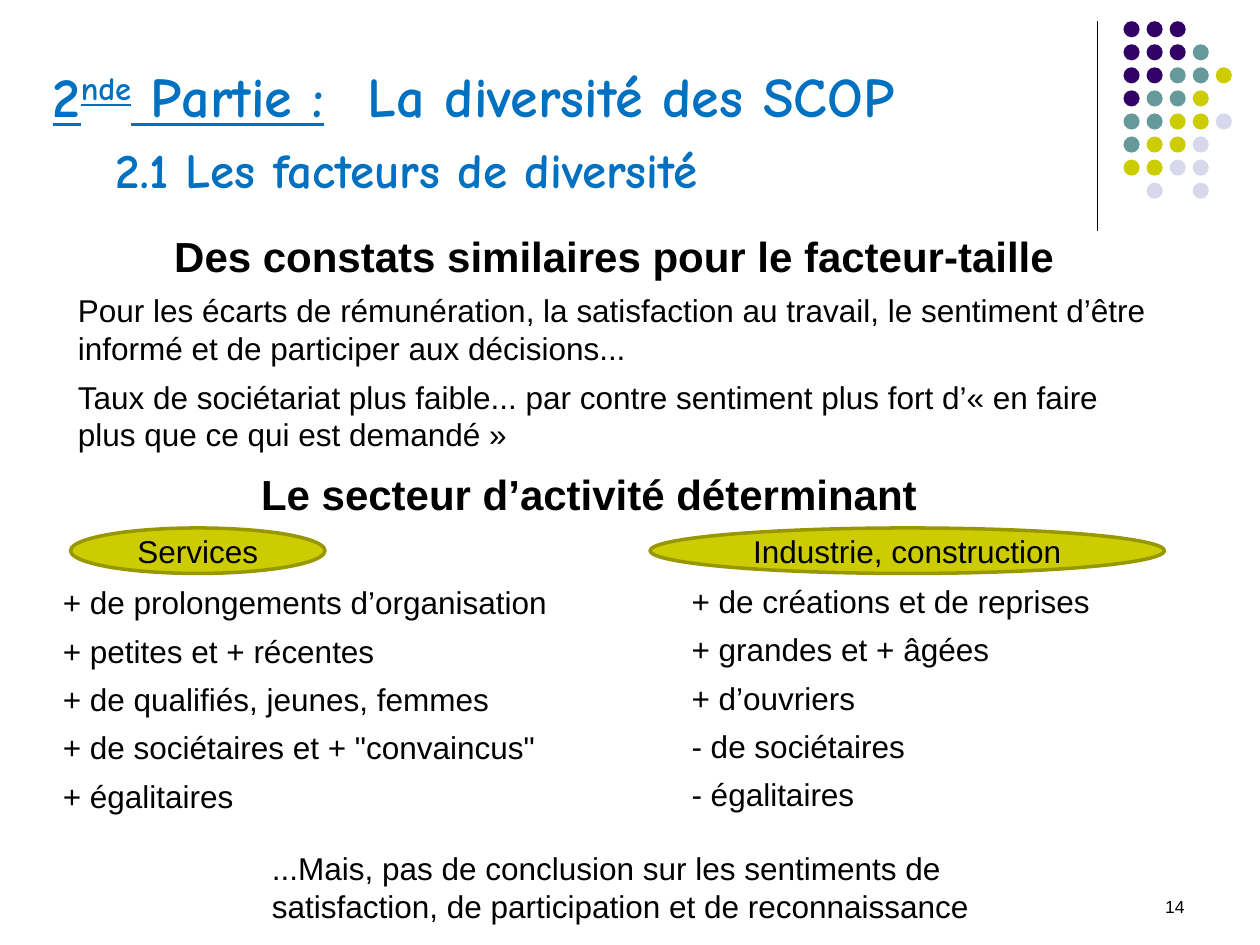
from dataclasses import dataclass

from lxml import etree
from pptx import Presentation
from pptx.dml.color import RGBColor
from pptx.enum.shapes import MSO_CONNECTOR, MSO_SHAPE
from pptx.enum.text import MSO_ANCHOR, MSO_AUTO_SIZE, PP_ALIGN
from pptx.oxml.ns import qn
from pptx.util import Pt

LEFT, CENTER, RIGHT = PP_ALIGN.LEFT, PP_ALIGN.CENTER, PP_ALIGN.RIGHT
TOP, MIDDLE, BOTTOM = MSO_ANCHOR.TOP, MSO_ANCHOR.MIDDLE, MSO_ANCHOR.BOTTOM
OVAL = MSO_SHAPE.OVAL
TITLE_ONLY = 5


@dataclass(frozen=True)
class Theme:
    title_font: str = "Comic Neue"
    body_font: str = "Arial"
    title_size: int = 32
    subtitle_size: int = 28
    heading_size: int = 24
    body_size: int = 18
    number_size: int = 10
    paragraph_gap: int = 6
    title: str = "0070C0"
    text: str = "000000"
    purple: str = "330066"
    teal: str = "669999"
    olive: str = "CCCC00"
    lavender: str = "D8D8EC"
    outline: str = "979700"


THEME = Theme()
DOT_COLORS = {"P": THEME.purple, "T": THEME.teal, "O": THEME.olive, "L": THEME.lavender}
DOT_ROWS = ["PPP", "PPPT", "PPTTO", "PTTO", "TTOOL", "TOOL", "OOLL", " L L"]

BODY = {"name": THEME.body_font, "size": Pt(THEME.body_size), "bold": False}
HEADING = BODY | {"size": Pt(THEME.heading_size), "bold": True}
NUMBER = BODY | {"size": Pt(THEME.number_size)}
TITLE = {"name": THEME.title_font, "size": Pt(THEME.title_size), "bold": True}
UNDERLINED = TITLE | {"underline": True}
SUBTITLE = TITLE | {"size": Pt(THEME.subtitle_size)}

# Each comparison column: label, oval (left, width), list (left, top), points
SECTORS = [
    ("Services", (40.3, 145.4), (28.8, 329.8), [
        "+ de prolongements d’organisation",
        "+ petites et + récentes",
        "+ de qualifiés, jeunes, femmes",
        '+ de sociétaires et + "convaincus"',
        "+ égalitaires",
    ]),
    ("Industrie, construction", (371.5, 293.8), (388.1, 329), [
        "+ de créations et de reprises",
        "+ grandes et + âgées",
        "+ d’ouvriers",
        "- de sociétaires",
        "- égalitaires",
    ]),
]


def rgb(color):
    return RGBColor.from_string(color)


def add_run(paragraph, text, style, color=THEME.text):
    run = paragraph.add_run()
    run.text = text
    for name, value in style.items():
        setattr(run.font, name, value)
    run.font.color.rgb = rgb(color)
    return run


def fill_text(frame, lines, anchor=TOP, gap=THEME.paragraph_gap):
    """Write (text, style, alignment) lines into a text frame."""
    frame.word_wrap = True
    frame.vertical_anchor = anchor
    for index, (text, style, alignment) in enumerate(lines):
        paragraph = frame.add_paragraph() if index else frame.paragraphs[0]
        paragraph.alignment = alignment
        paragraph.space_after = Pt(gap)
        add_run(paragraph, text, style)


def add_text(slide, box, lines):
    shape = slide.shapes.add_textbox(*map(Pt, box))
    fill_text(shape.text_frame, lines)


def add_oval(shapes, box, fill, outline=None):
    shape = shapes.add_shape(OVAL, *map(Pt, box))
    shape.shadow.inherit = False
    shape.fill.solid()
    shape.fill.fore_color.rgb = rgb(fill)
    if outline:
        shape.line.color.rgb = rgb(outline)
        shape.line.width = Pt(2)
    else:
        shape.line.fill.background()
    return shape


def add_decoration(slide):
    line = slide.shapes.add_connector(
        MSO_CONNECTOR.STRAIGHT, Pt(627), Pt(12), Pt(627), Pt(132))
    line.line.color.rgb = rgb(THEME.text)
    line.line.width = Pt(0.75)
    etree.SubElement(line._element.spPr, qn("a:effectLst"))

    left, top, pitch, size = 642, 12.1, 13.18, 9.2
    dots = slide.shapes.add_group_shape()
    for row, codes in enumerate(DOT_ROWS):
        for column, code in enumerate(codes):
            if code in DOT_COLORS:
                box = (left + column * pitch, top + row * pitch, size, size)
                add_oval(dots.shapes, box, DOT_COLORS[code])


def add_title(slide):
    title = slide.shapes.title
    box = {"left": 23, "top": 31.7, "width": 601.2, "height": 85}
    for name, value in box.items():
        setattr(title, name, Pt(value))
    frame = title.text_frame
    frame.auto_size = MSO_AUTO_SIZE.NONE
    frame.vertical_anchor = BOTTOM

    heading = frame.paragraphs[0]
    heading.space_after = Pt(THEME.paragraph_gap)
    add_run(heading, "2", UNDERLINED, THEME.title)
    ordinal = add_run(heading, "nde", UNDERLINED, THEME.title)
    ordinal._r.get_or_add_rPr().set("baseline", "30000")
    add_run(heading, " Partie :", UNDERLINED, THEME.title)
    add_run(heading, "\tLa diversité des SCOP", TITLE, THEME.title)

    subtitle = frame.add_paragraph()
    add_run(subtitle, "\t2.1 Les facteurs de diversité", SUBTITLE, THEME.title)
    for paragraph in frame.paragraphs:
        paragraph.alignment = LEFT


def add_sector(slide, label, oval, list_position, points):
    left, width = oval
    shape = add_oval(slide.shapes, (left, 301.7, width, 26), THEME.olive, THEME.outline)
    fill_text(shape.text_frame, [(label, BODY, CENTER)], MIDDLE, gap=0)
    add_text(slide, (*list_position, 313.2, 140.4),
             [(point, BODY, LEFT) for point in points])


def main():
    presentation = Presentation()
    presentation.slide_width, presentation.slide_height = Pt(720), Pt(540)
    slide = presentation.slides.add_slide(presentation.slide_layouts[TITLE_ONLY])

    # Header
    add_decoration(slide)
    add_title(slide)

    # Size factor
    add_text(slide, (37.4, 128.2, 627.1, 135.4), [
        ("Des constats similaires pour le facteur-taille", HEADING, CENTER),
        ("Pour les écarts de rémunération, la satisfaction au travail, le sentiment "
         "d’être informé et de participer aux décisions...", BODY, LEFT),
        ("Taux de sociétariat plus faible... par contre sentiment plus fort "
         "d’« en faire plus que ce qui est demandé »", BODY, LEFT),
    ])

    # Sector comparison
    add_text(slide, (40.3, 264.2, 592.6, 36),
             [("Le secteur d’activité déterminant", HEADING, CENTER)])
    for sector in SECTORS:
        add_sector(slide, *sector)

    # Conclusion and slide number
    add_text(slide, (148.3, 481.7, 445.7, 51.1), [
        ("...Mais, pas de conclusion sur les sentiments de satisfaction, "
         "de participation et de reconnaissance", BODY, LEFT),
    ])
    add_text(slide, (609.8, 508.3, 74.2, 20.2), [("14", NUMBER, RIGHT)])

    presentation.save("out.pptx")


if __name__ == "__main__":
    main()
